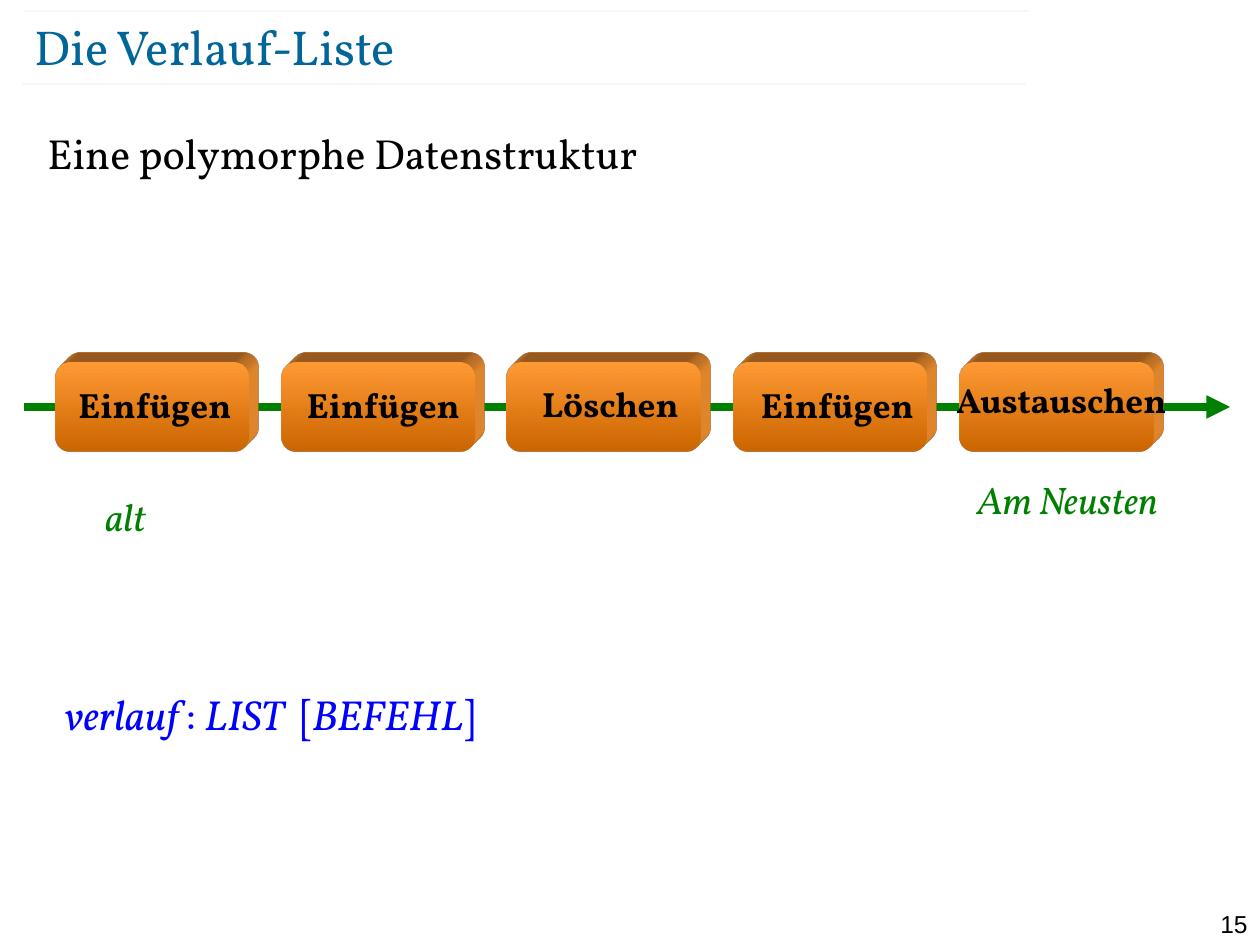
from dataclasses import dataclass

from lxml.etree import SubElement
from pptx import Presentation
from pptx.dml.color import RGBColor
from pptx.enum.shapes import MSO_CONNECTOR, MSO_SHAPE
from pptx.enum.text import MSO_ANCHOR, PP_ALIGN
from pptx.oxml.ns import qn
from pptx.util import Emu, Pt

EMU_PER_PX = 914400 / 126
TEAL = RGBColor(0x00, 0x66, 0x99)
GREEN = RGBColor(0x00, 0x80, 0x00)
BLUE = RGBColor(0x00, 0x00, 0xFF)
BLACK = RGBColor(0x00, 0x00, 0x00)
LIGHT_ORANGE = RGBColor(0xFF, 0x99, 0x33)
DARK_ORANGE = RGBColor(0xCC, 0x66, 0x00)

SERIF = "Vollkorn"
BLOCK_LEFT, BLOCK_TOP, BLOCK_PITCH = 55, 362, 226.25
BLOCK_WIDTH, BLOCK_HEIGHT = 194, 90
EXTRUSION_DEPTH = 28


@dataclass(frozen=True)
class Run:
    text: str
    italic: bool = False
    bold: bool = False


@dataclass(frozen=True)
class TextItem:
    left: int
    top: int
    width: int
    height: int
    runs: tuple[Run, ...]
    size: int
    color: RGBColor
    align: PP_ALIGN = PP_ALIGN.LEFT
    font: str = SERIF
    inset: bool = True
    rounded: bool = False


def command(left: int, top: int, width: int, height: int, name: str,
            rounded: bool = False) -> TextItem:
    return TextItem(left, top, width, height, (Run(name, bold=True),), 20, BLACK,
                    PP_ALIGN.CENTER, rounded=rounded)


def age(left: int, top: int, width: int, name: str) -> TextItem:
    return TextItem(left, top, width, 59, (Run(name, italic=True),), 22, GREEN, PP_ALIGN.CENTER)


HEADINGS = (
    TextItem(1191, 903, 69, 30, (Run("15"),), 14, BLACK, PP_ALIGN.RIGHT, "Arial"),
    TextItem(35, 16, 1095, 60, (Run("Die Verlauf-Liste"),), 28, TEAL, inset=False),
    TextItem(35, 121, 1184, 777, (Run("Eine polymorphe Datenstruktur"),), 24, BLACK),
    TextItem(52, 682, 1155, 63, (
        Run("verlauf ", italic=True), Run(": "), Run("LIST", italic=True),
        Run("  ["), Run("BEFEHL", italic=True), Run("]")), 24, BLUE),
)
LABELS = (
    command(523, 376, 175, 55, "Löschen"),
    command(942, 372, 239, 55, "Austauschen"),
    command(55, 374, 200, 60, "Einfügen", rounded=True),
    command(285, 374, 197, 60, "Einfügen", rounded=True),
    command(738, 374, 199, 60, "Einfügen", rounded=True),
    age(40, 487, 171, "alt"),
    age(932, 470, 271, "Am Neusten"),
)


def px(length: int) -> Emu:
    return Emu(round(length * EMU_PER_PX))


def add_text(slide, item: TextItem) -> None:
    area = px(item.left), px(item.top), px(item.width), px(item.height)
    if item.rounded:
        shape = slide.shapes.add_shape(MSO_SHAPE.ROUNDED_RECTANGLE, *area)
        shape.fill.background()
        shape.line.fill.background()
        shape.shadow.inherit = False
    else:
        shape = slide.shapes.add_textbox(*area)
    frame = shape.text_frame
    frame.word_wrap = True
    frame.vertical_anchor = MSO_ANCHOR.TOP
    if not item.inset:
        frame.margin_left = frame.margin_right = frame.margin_top = frame.margin_bottom = 0
        frame.vertical_anchor = MSO_ANCHOR.MIDDLE
    paragraph = frame.paragraphs[0]
    paragraph.alignment = item.align
    for part in item.runs:
        run = paragraph.add_run()
        run.text = part.text
        run.font.name = item.font
        run.font.size = Pt(item.size)
        run.font.color.rgb = item.color
        run.font.italic = part.italic
        run.font.bold = part.bold


def add_line(slide, left: int, right: int, y: int, color: RGBColor, width: float):
    line = slide.shapes.add_connector(MSO_CONNECTOR.STRAIGHT, px(left), px(y), px(right), px(y))
    line.line.color.rgb = color
    line.line.width = Pt(width)
    SubElement(line._element.spPr, qn("a:effectLst"))
    return line


def add_hairline(slide, left: int, right: int, y: int) -> None:
    line = add_line(slide, left, right, y, TEAL, 0.1)
    color = line.line._get_or_add_ln().find(".//" + qn("a:srgbClr"))
    SubElement(color, qn("a:alpha"), val="35000")


def add_arrow(slide, left: int, right: int, y: int) -> None:
    line = add_line(slide, left, right, y, GREEN, 4.5)
    SubElement(line.line._get_or_add_ln(), qn("a:tailEnd"), type="triangle")


def extrude(shape, depth: int, color: RGBColor) -> None:
    """Give the shape depth running up and to the right."""
    properties = shape._element.spPr
    scene = SubElement(properties, qn("a:scene3d"))
    SubElement(scene, qn("a:camera"), prst="legacyObliqueTopRight")
    SubElement(scene, qn("a:lightRig"), rig="legacyFlat3", dir="b")
    solid = SubElement(properties, qn("a:sp3d"), extrusionH=str(px(depth)),
                       prstMaterial="legacyMatte")
    for bevel in ("a:bevelT", "a:bevelB"):
        SubElement(solid, qn(bevel), w="13500", h="13500", prst="angle")
    extrusion_color = SubElement(solid, qn("a:extrusionClr"))
    SubElement(extrusion_color, qn("a:srgbClr"), val=str(color))


def add_block(slide, left: int, top: int) -> None:
    block = slide.shapes.add_shape(MSO_SHAPE.ROUNDED_RECTANGLE, px(left), px(top),
                                   px(BLOCK_WIDTH), px(BLOCK_HEIGHT))
    block.fill.gradient()
    block.fill.gradient_angle = 270
    for stop, color, position in zip(block.fill.gradient_stops,
                                     (LIGHT_ORANGE, DARK_ORANGE), (0, 1)):
        stop.color.rgb = color
        stop.position = position
    block.line.fill.background()
    block.shadow.inherit = False
    extrude(block, EXTRUSION_DEPTH, LIGHT_ORANGE)


def main() -> None:
    presentation = Presentation()
    presentation.slide_width, presentation.slide_height = px(1260), px(945)
    slide = presentation.slides.add_slide(presentation.slide_layouts[6])
    add_hairline(slide, 22, 1026, 84)
    add_hairline(slide, 24, 1029, 11)
    for item in HEADINGS:
        add_text(slide, item)
    add_arrow(slide, 24, 1230, 407)
    for index in range(5):
        add_block(slide, int(BLOCK_LEFT + index * BLOCK_PITCH), BLOCK_TOP)
    for item in LABELS:
        add_text(slide, item)
    presentation.save("out.pptx")


if __name__ == "__main__":
    main()
